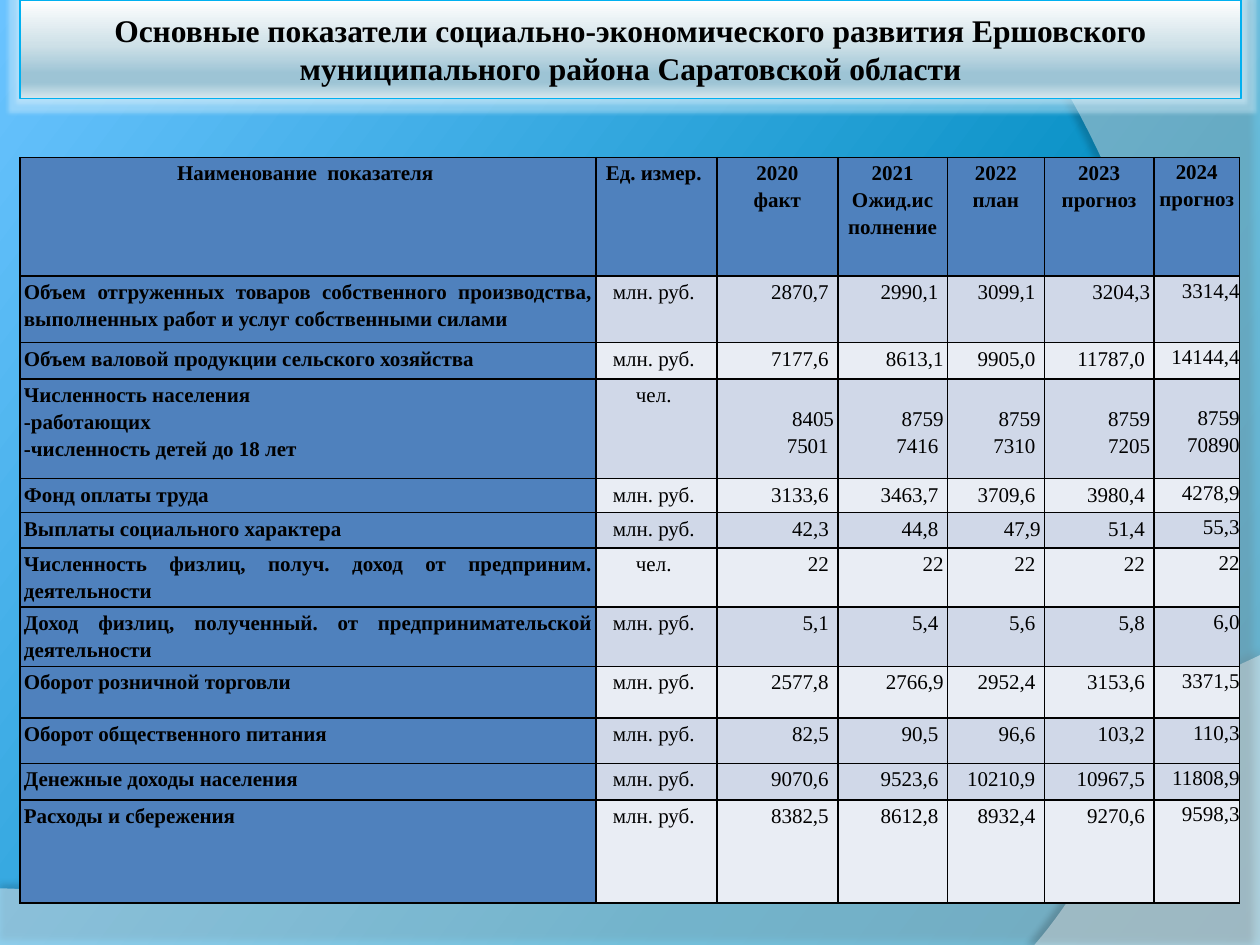
"""Build a slide with the main socio-economic indicators of a district."""
from lxml.etree import SubElement
from pptx import Presentation
from pptx.dml.color import RGBColor
from pptx.enum.shapes import MSO_SHAPE
from pptx.enum.text import MSO_ANCHOR, PP_ALIGN
from pptx.oxml.ns import qn
from pptx.util import Inches, Pt

CENTER, RIGHT, JUSTIFY = PP_ALIGN.CENTER, PP_ALIGN.RIGHT, PP_ALIGN.JUSTIFY
MIDDLE, RECTANGLE = MSO_ANCHOR.MIDDLE, MSO_SHAPE.RECTANGLE
FONT = "Times New Roman"
BLACK, WHITE = RGBColor(0, 0, 0), RGBColor(255, 255, 255)
BLUE, BORDER = RGBColor(0x4F, 0x81, 0xBD), RGBColor(0x00, 0xB0, 0xF0)
BAND_DARK, BAND_LIGHT = RGBColor(0xD0, 0xD8, 0xE8), RGBColor(0xE9, 0xED, 0xF4)
SKY = [(0, "0076A1"), (30, "008DC0"), (100, "6AC3FF")]
STEEL = [(0, "FFFFFF"), (45, "CFE1E8"), (75, "9DC4D5"), (85, "A0C6D6"), (100, "D5E6ED")]

TITLE = ("Основные показатели социально-экономического развития Ершовского "
         "муниципального района Саратовской области")
HEADER = ["Наименование  показателя ", "Ед. измер. ", "2020\nфакт", "2021\nОжид.ис\nполнение",
          "2022\nплан", "2023\nпрогноз", "2024\nпрогноз"]
MONEY, PEOPLE = "млн. руб. ", "чел. "
ROWS = [
    (0.53, BAND_DARK, "Объем отгруженных товаров собственного производства, выполненных работ "
     "и услуг собственными силами ", MONEY, "2870,7 ", "2990,1 ", "3099,1 ", "3204,3", "3314,4"),
    (0.29, BAND_LIGHT, "Объем валовой продукции сельского хозяйства ", MONEY,
     "7177,6 ", "8613,1", "9905,0 ", "11787,0 ", "14144,4"),
    (0.79, BAND_DARK, "Численность населения\n-работающих\n-численность детей до 18 лет ", PEOPLE,
     "8405\n7501 ", "8759\n7416 ", "8759\n7310 ", "8759\n7205", "8759\n70890"),
    (0.27, BAND_LIGHT, "Фонд оплаты труда ", MONEY,
     "3133,6 ", "3463,7 ", "3709,6 ", "3980,4 ", "4278,9"),
    (0.28, BAND_DARK, "Выплаты социального характера ", MONEY,
     "42,3 ", "44,8 ", "47,9", "51,4 ", "55,3"),
    (0.47, BAND_LIGHT, "Численность физлиц, получ. доход от предприним. деятельности ", PEOPLE,
     "22 ", "22", "22 ", "22 ", "22"),
    (0.47, BAND_DARK, "Доход физлиц, полученный. от предпринимательской деятельности ", MONEY,
     "5,1 ", "5,4 ", "5,6 ", "5,8 ", "6,0"),
    (0.41, BAND_LIGHT, "Оборот розничной торговли ", MONEY,
     "2577,8 ", "2766,9", "2952,4 ", "3153,6 ", "3371,5"),
    (0.36, BAND_DARK, "Оборот общественного питания ", MONEY,
     "82,5 ", "90,5 ", "96,6 ", "103,2 ", "110,3"),
    (0.29, BAND_DARK, "Денежные доходы населения ", MONEY,
     "9070,6 ", "9523,6 ", "10210,9 ", "10967,5 ", "11808,9"),
    (0.82, BAND_LIGHT, "Расходы и сбережения ", MONEY,
     "8382,5 ", "8612,8 ", "8932,4 ", "9270,6 ", "9598,3"),
]
COLUMNS = [4.57, 0.96, 0.96, 0.87, 0.77, 0.87, 0.68]
HEADER_HEIGHT, SKIPPED_LINE = 0.94, 0.19
LEFT, WIDTH = 0.16, 9.69

WAVES = [
    dict(corners=[(0, 7.5), (10, 7.5)], curve=[(10, 5.2), (5.59, 7.29), (3.91, 7.19), (0, 7.05)],
         opacity=45, shadow=(35, 4, 3.5, 270)),
    dict(corners=[(10, 0), (10, 7.5)], curve=[(8.21, 7.5), (9.35, 6.19), (10.18, 3), (8, 0)],
         opacity=40, shadow=(45, 4, 4, 180)),
]


def add_color(parent, value, opacity):
    color = SubElement(parent, qn("a:srgbClr"), val=value)
    SubElement(color, qn("a:alpha"), val=str(opacity * 1000))


def set_gradient(fill, owner, stops, angle):
    fill.gradient()
    grad = owner.find(".//" + qn("a:gradFill"))
    for child in list(grad):
        grad.remove(child)
    stop_list = SubElement(grad, qn("a:gsLst"))
    for position, value in stops:
        add_color(SubElement(stop_list, qn("a:gs"), pos=str(position * 1000)), value, 100)
    SubElement(grad, qn("a:lin"), ang=str(angle * 60000), scaled="0")


def add_effect(shape, name, color, opacity, **attributes):
    shape.shadow.inherit = False
    effects = shape.element.spPr.find(qn("a:effectLst"))
    values = {key: str(value) for key, value in attributes.items()}
    add_color(SubElement(effects, qn("a:" + name), **values), color, opacity)


def bezier(points, steps=60):
    for i in range(steps + 1):
        t = i / steps
        weights = ((1 - t) ** 3, 3 * t * (1 - t) ** 2, 3 * t ** 2 * (1 - t), t ** 3)
        yield tuple(sum(w * p[axis] for w, p in zip(weights, points)) for axis in (0, 1))


def add_wave(s, corners, curve, opacity, shadow):
    points = [(Inches(x), Inches(y)) for x, y in corners + list(bezier(curve))]
    builder = s.shapes.build_freeform(*points[0])
    builder.add_line_segments(points[1:])
    wave = builder.convert_to_shape()
    wave.fill.solid()
    wave.fill.fore_color.rgb = WHITE
    color = wave.element.spPr.find(qn("a:solidFill"))[0]
    SubElement(color, qn("a:alpha"), val=str(opacity * 1000))
    wave.line.fill.background()
    strength, blur, distance, direction = shadow
    add_effect(wave, "outerShdw", "000000", strength, blurRad=Pt(blur), dist=Pt(distance),
               dir=direction * 60000)


def write(tf, text, align, size, bold, spacing=1.0):
    for i, line in enumerate(text.split("\n")):
        p = tf.add_paragraph() if i else tf.paragraphs[0]
        p.alignment, p.line_spacing = align, spacing
        r = p.add_run()
        r.text = line
        for key, value in dict(name=FONT, size=Pt(size), bold=bold).items():
            setattr(r.font, key, value)
        r.font.color.rgb = BLACK


def add_borders(cell):
    properties = cell._tc.get_or_add_tcPr()
    for i, side in enumerate(("lnL", "lnR", "lnT", "lnB")):
        line = SubElement(properties, qn("a:" + side), w=str(Pt(1)))
        add_color(SubElement(line, qn("a:solidFill")), "000000", 100)
        properties.remove(line)
        properties.insert(i, line)


def add_title(s):
    sp = s.shapes.add_shape(RECTANGLE, Inches(LEFT), 0, Inches(WIDTH), Inches(0.78))
    set_gradient(sp.fill, sp.element, STEEL, 90)
    sp.line.color.rgb, sp.line.width = BORDER, Pt(0.75)
    add_effect(sp, "glow", "D5EEFA", 45, rad=Pt(5))
    tf = sp.text_frame
    tf.word_wrap, tf.vertical_anchor = True, MIDDLE
    for side in ("left", "right", "top", "bottom"):
        setattr(tf, "margin_" + side, Inches(0.05))
    write(tf, TITLE, CENTER, 18, True)


def add_indicators(s):
    rows = [(HEADER_HEIGHT, BLUE, *HEADER)] + ROWS
    table = s.shapes.add_table(len(rows), len(COLUMNS), Inches(LEFT), Inches(1.25), Inches(WIDTH),
                               Inches(sum(row[0] for row in rows))).table
    for column, width in zip(table.columns, COLUMNS):
        column.width = Inches(width)
    for i, (height, band, *texts) in enumerate(rows):
        table.rows[i].height = Inches(height)
        for j, text in enumerate(texts):
            cell = table.cell(i, j)
            cell.fill.solid()
            cell.fill.fore_color.rgb = band if j else BLUE
            last = j == len(COLUMNS) - 1
            skipped = SKIPPED_LINE if i and j and "\n" in text else 0
            cell.margin_left = cell.margin_right = Inches(0 if last else 0.03)
            cell.margin_top, cell.margin_bottom = Inches((0 if last else 0.01) + skipped), 0
            align = CENTER if i == 0 or j == 1 else RIGHT if j else JUSTIFY
            write(cell.text_frame, text, align, 12, i == 0 or j == 0, 1.15)
            add_borders(cell)


def main():
    prs = Presentation()
    prs.slide_width, prs.slide_height = Inches(10), Inches(7.5)
    s = prs.slides.add_slide(prs.slide_layouts[6])
    set_gradient(s.background.fill, s.element, SKY, 217)
    for wave in WAVES:
        add_wave(s, **wave)
    add_title(s)
    add_indicators(s)
    prs.save("out.pptx")


if __name__ == "__main__":
    main()
